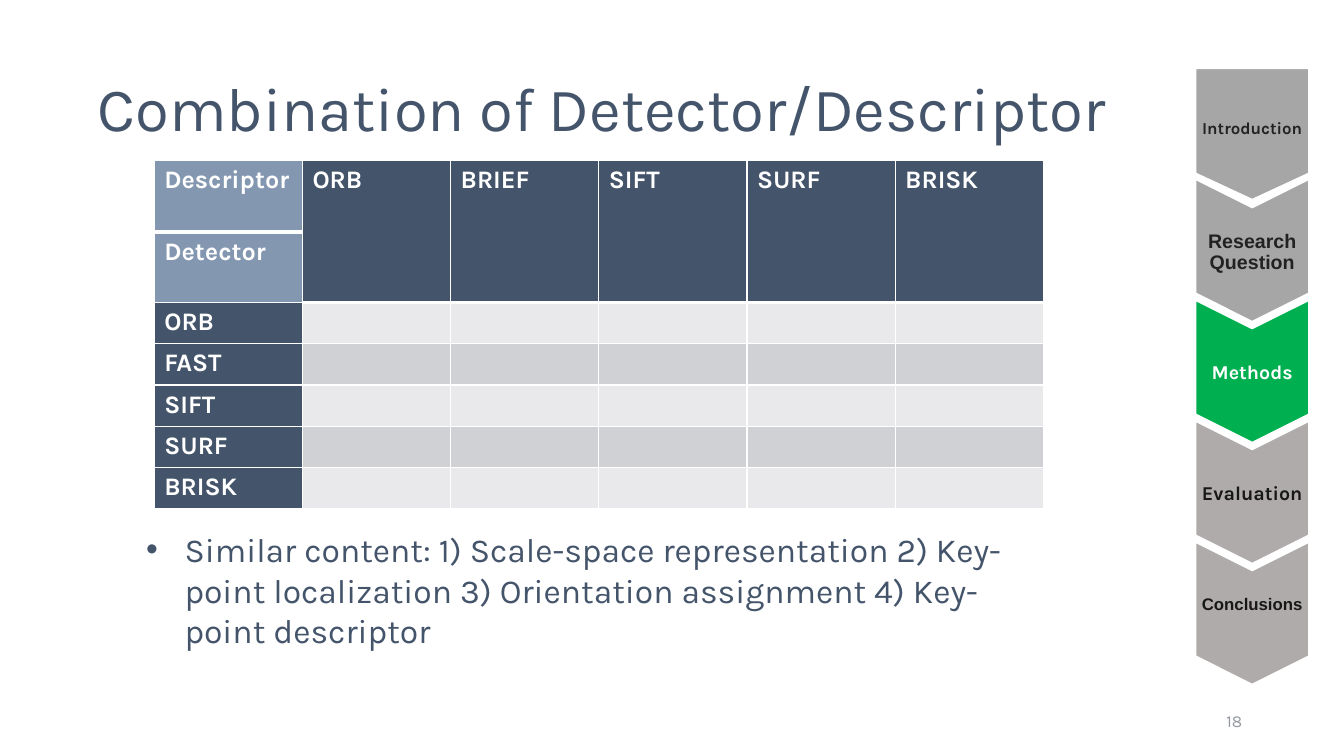
from dataclasses import dataclass

from lxml.etree import SubElement
from pptx import Presentation
from pptx.dml.color import RGBColor
from pptx.enum.text import MSO_ANCHOR as Anchor, MSO_AUTO_SIZE as AutoSize, PP_ALIGN as Align
from pptx.oxml.ns import qn
from pptx.slide import Slide
from pptx.table import _Cell as Cell
from pptx.text.text import TextFrame
from pptx.util import Inches, Pt


@dataclass(frozen=True)
class Theme:
    font: str = "Karla"
    plain_font: str = "Arial"
    navy: str = "44546A"
    steel: str = "8497B0"
    bands: tuple[str, str] = ("E9E9EB", "CFD1D4")
    white: str = "FFFFFF"
    done: str = "A6A6A6"
    current: str = "00B050"
    ahead: str = "AFABAB"
    dark: str = "222222"
    black: str = "181717"
    muted: str = "9499A1"
    title_size: int = 44
    body_size: int = 24
    table_size: int = 18
    step_size: int = 14
    small_size: int = 12


THEME = Theme()


@dataclass(frozen=True)
class Step:
    label: str
    fill: str
    color: str
    size: int = THEME.step_size
    font: str = THEME.font
    top: float = 0
    height: float = 1.41
    tip: float = 0.28
    notch: float = 0.28
    inset_top: float = 0.39
    inset_bottom: float = 0.35


STEPS_LEFT, STEPS_WIDTH = 11.86, 1.12
FIRST_CHEVRON, STEP_PITCH = 1.78, 1.2

STEPS = [
    Step("Introduction", THEME.done, THEME.dark, THEME.small_size, top=0.68,
         height=1.3, tip=0.26, notch=0, inset_top=0.08, inset_bottom=0.18),
    Step("Research Question", THEME.done, THEME.dark, font=THEME.plain_font,
         top=FIRST_CHEVRON),
    Step("Methods", THEME.current, THEME.white, top=FIRST_CHEVRON + STEP_PITCH),
    Step("Evaluation", THEME.ahead, THEME.black, top=FIRST_CHEVRON + 2 * STEP_PITCH),
    Step("Conclusions", THEME.ahead, THEME.black, THEME.small_size, THEME.plain_font,
         top=FIRST_CHEVRON + 3 * STEP_PITCH, inset_bottom=0.55),
]

DESCRIPTORS = ["ORB", "BRIEF", "SIFT", "SURF", "BRISK"]
DETECTORS = ["ORB", "FAST", "SIFT", "SURF", "BRISK"]


def rgb(color: str) -> RGBColor:
    return RGBColor.from_string(color)


def write(frame: TextFrame, text: str, *, size: int, color: str, font: str = THEME.font,
          bold: bool = False, align: Align = Align.LEFT, spacing: float = 1.0,
          bullet: str = "", indent: float = 0) -> None:
    """Fill a text frame with one formatted paragraph."""
    frame.word_wrap = True
    para = frame.paragraphs[0]
    para.alignment = align
    para.line_spacing = spacing
    para.space_before = Pt(0)
    if bullet:
        props = para._p.get_or_add_pPr()
        props.set("marL", str(Inches(indent)))
        props.set("indent", str(-Inches(indent)))
        SubElement(props, qn("a:buFont"), typeface="Arial")
        SubElement(props, qn("a:buChar"), char=bullet)
    span = para.add_run()
    span.text = text
    span.font.name = font
    span.font.size = Pt(size)
    span.font.bold = bold
    span.font.color.rgb = rgb(color)


def place(box, left: float, top: float, width: float, height: float) -> None:
    box.left, box.top = Inches(left), Inches(top)
    box.width, box.height = Inches(width), Inches(height)


def draw_step(page: Slide, step: Step) -> None:
    """Draw one downward chevron of the progress bar."""
    left, right = STEPS_LEFT, STEPS_LEFT + STEPS_WIDTH
    middle = (left + right) / 2
    bottom = step.top + step.height
    outline = [(right, bottom - step.tip), (middle, bottom),
               (left, bottom - step.tip), (left, step.top)]
    if step.notch:
        outline.append((middle, step.top + step.notch))
    builder = page.shapes.build_freeform(Inches(right), Inches(step.top))
    builder.add_line_segments([(Inches(x), Inches(y)) for x, y in outline], close=True)
    chevron = builder.convert_to_shape()
    chevron.shadow.inherit = False
    chevron.fill.solid()
    chevron.fill.fore_color.rgb = rgb(step.fill)
    chevron.line.color.rgb = rgb(THEME.white)
    chevron.line.width = Pt(1)
    frame = chevron.text_frame
    frame.vertical_anchor = Anchor.MIDDLE
    frame.margin_left = frame.margin_right = Inches(0.04)
    frame.margin_top = Inches(step.inset_top)
    frame.margin_bottom = Inches(step.inset_bottom)
    write(frame, step.label, size=step.size, color=step.color, font=step.font,
          bold=True, align=Align.CENTER, spacing=0.9)


def style_cell(cell: Cell, fill: str, bottom: float) -> None:
    """Give a cell white borders and a solid fill."""
    props = cell._tc.get_or_add_tcPr()
    for side, width in (("L", 1), ("R", 1), ("T", 1), ("B", bottom)):
        border = SubElement(props, qn(f"a:ln{side}"), w=str(Pt(width)))
        paint = SubElement(border, qn("a:solidFill"))
        SubElement(paint, qn("a:srgbClr"), val=THEME.white)
    cell.fill.solid()
    cell.fill.fore_color.rgb = rgb(fill)


def draw_table(page: Slide) -> None:
    labels = [["Descriptor", *DESCRIPTORS], ["Detector"], *[[name] for name in DETECTORS]]
    heights = [0.71, 0.7] + [0.41] * len(DETECTORS)
    columns = len(DESCRIPTORS) + 1
    table = page.shapes.add_table(len(heights), columns, Inches(1.53), Inches(1.59),
                                  Inches(8.81), Inches(sum(heights))).table
    for column in table.columns:
        column.width = Inches(1.47)
    for row, height in enumerate(heights):
        table.rows[row].height = Inches(height)
        for column in range(columns):
            cell = table.cell(row, column)
            if row < 2:
                fill = THEME.navy if column else THEME.steel
            else:
                fill = THEME.bands[row % 2] if column else THEME.navy
            style_cell(cell, fill, bottom=1 if row else 3)
            if column < len(labels[row]):
                write(cell.text_frame, labels[row][column], size=THEME.table_size,
                      color=THEME.white, bold=True)
    for column in range(1, columns):
        table.cell(0, column).merge(table.cell(1, column))


def main() -> None:
    deck = Presentation()
    deck.slide_width, deck.slide_height = Inches(13.33), Inches(7.5)
    page = deck.slides.add_slide(deck.slide_layouts[1])

    # Title
    title = page.shapes.title
    place(title, 0.87, 0.38, 10.38, 1.45)
    title.text_frame.vertical_anchor = Anchor.MIDDLE
    title.text_frame.auto_size = AutoSize.NONE
    write(title.text_frame, "Combination of Detector/Descriptor",
          size=THEME.title_size, color=THEME.navy, spacing=0.9)

    # Progress bar
    for step in STEPS:
        draw_step(page, step)

    # Page number
    number = page.shapes.add_textbox(Inches(9.42), Inches(6.95), Inches(3), Inches(0.4))
    number.text_frame.vertical_anchor = Anchor.MIDDLE
    write(number.text_frame, "18", size=THEME.small_size, color=THEME.muted,
          align=Align.RIGHT)

    # Summary
    body = page.placeholders[1]
    place(body, 1.35, 5.2, 9.16, 1.31)
    body.text_frame.auto_size = AutoSize.NONE
    write(body.text_frame,
          "Similar content: 1) Scale-space representation 2) Key-point localization "
          "3) Orientation assignment 4) Key-point descriptor",
          size=THEME.body_size, color=THEME.navy, bullet="•", indent=0.38)

    # Detector and descriptor grid
    draw_table(page)

    deck.save("out.pptx")


if __name__ == "__main__":
    main()
